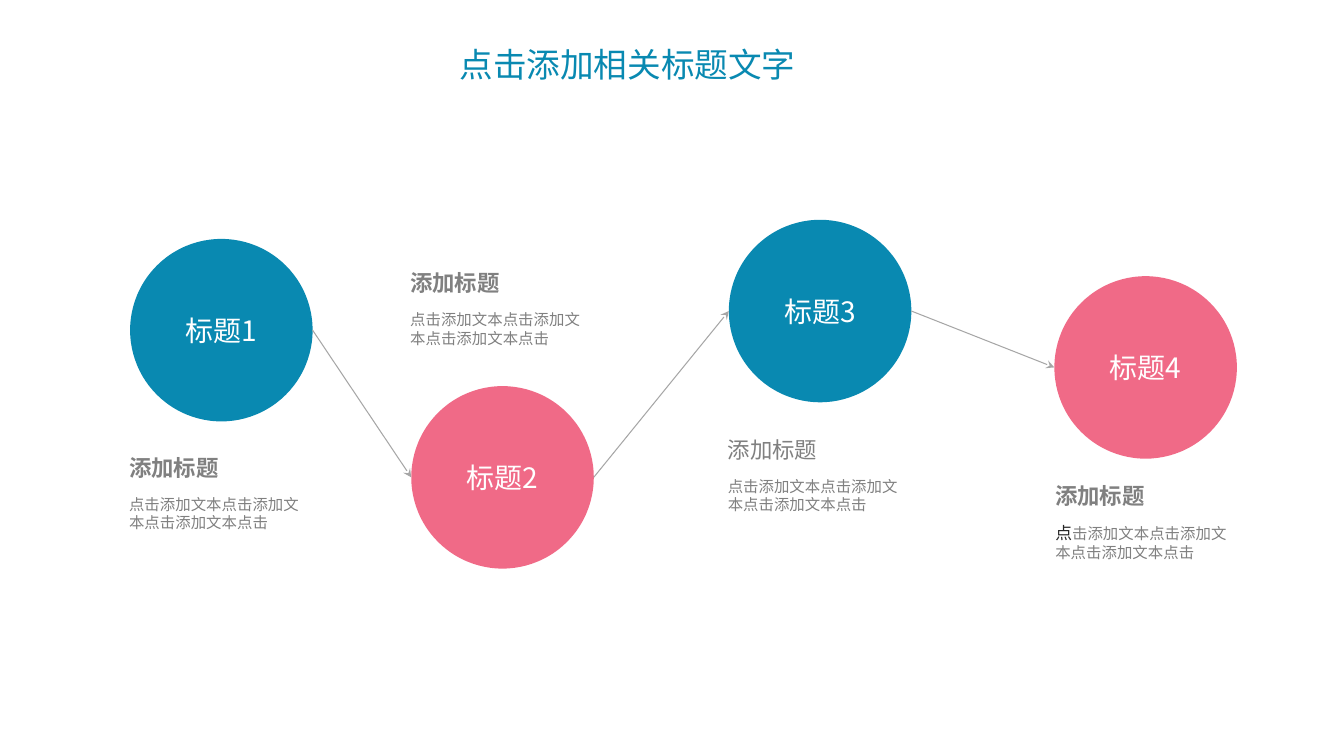
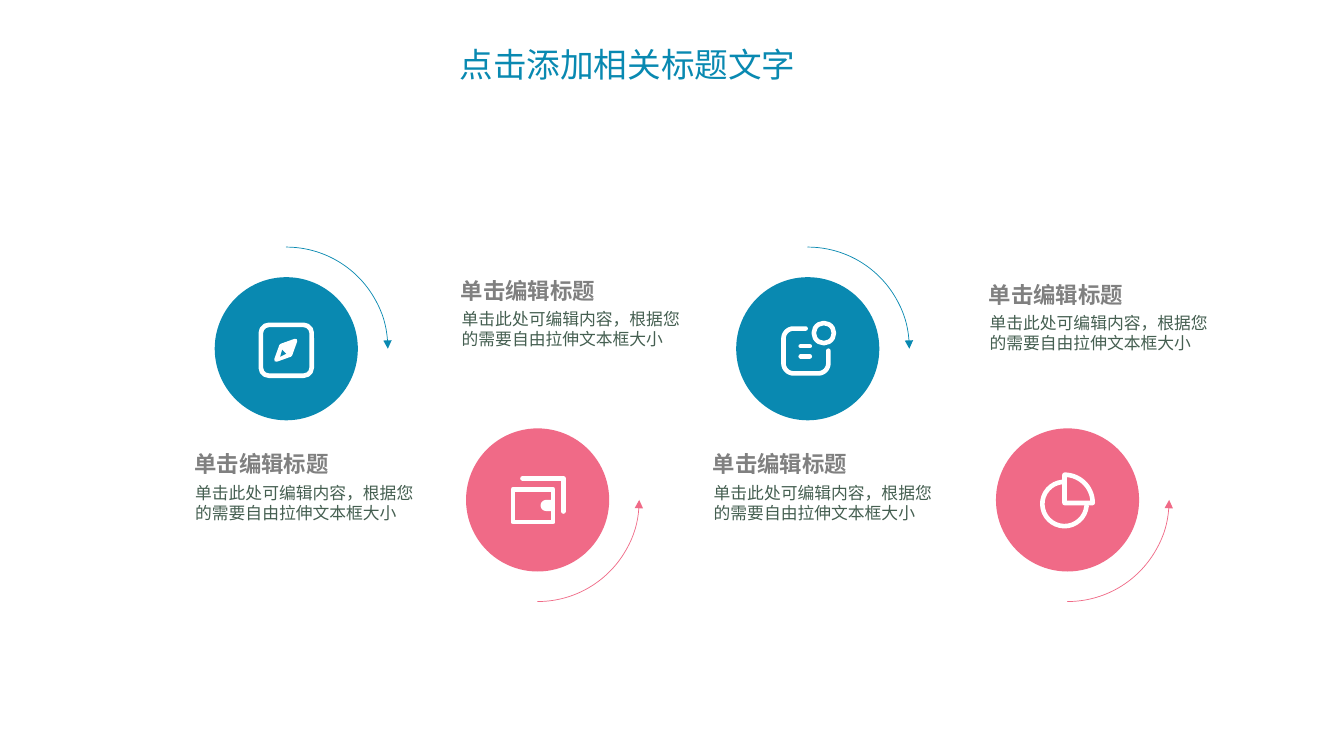
from math import cos, radians, sin

from lxml import etree
from pptx import Presentation
from pptx.dml.color import RGBColor
from pptx.enum.shapes import MSO_CONNECTOR, MSO_SHAPE
from pptx.enum.text import MSO_ANCHOR, MSO_AUTO_SIZE, PP_ALIGN
from pptx.oxml.ns import qn
from pptx.util import Inches, Pt

WIDTH, HEIGHT = Inches(13.333), Inches(7.5)
COLUMN, ROW = WIDTH / 100, HEIGHT / 100

BLUE = RGBColor(0x09, 0x89, 0xB1)
PINK = RGBColor(0xF0, 0x6A, 0x87)
WHITE = RGBColor(0xFF, 0xFF, 0xFF)
GRAY = RGBColor(0x80, 0x80, 0x80)
LINE_GRAY = RGBColor(0xA6, 0xA6, 0xA6)
INK = RGBColor(0x26, 0x26, 0x26)
MOSS = RGBColor(0x45, 0x5F, 0x51)
FONT = "Noto Sans CJK SC"

OVAL, ARC = MSO_SHAPE.OVAL, MSO_SHAPE.ARC
RECTANGLE, ROUNDED = MSO_SHAPE.RECTANGLE, MSO_SHAPE.ROUNDED_RECTANGLE
STRAIGHT = MSO_CONNECTOR.STRAIGHT
TOP, MIDDLE, CENTER = MSO_ANCHOR.TOP, MSO_ANCHOR.MIDDLE, PP_ALIGN.CENTER
GROW = MSO_AUTO_SIZE.SHAPE_TO_FIT_TEXT

STEP_SIZE = 13.58 * COLUMN
ICON_DISC = 10.65 * COLUMN
DOT = ICON_DISC / 142
STROKE = Pt(3.3)
WIDE_INSETS = (Inches(0.13), Inches(0.07))
TITLE_INSETS = (Inches(0.1), Inches(0.05))
NO_INSETS = (0, 0)

STEPS = [
    ("标题1", 9.68, 31.6, BLUE, -1.05, 25.73, True, ""),
    ("标题2", 30.6, 51.07, PINK, -1.05, -18.13, True, ""),
    ("标题3", 54.23, 29.07, BLUE, -1.05, 25.87, False, ""),
    ("标题4", 78.45, 36.53, PINK, -0.9, 24.53, True, "点"),
]
STEP_TEXT = "点击添加文本点击添加文本点击添加文本点击"
TOPIC_TEXT = "单击此处可编辑内容，根据您的需要自由拉伸文本框大小"


def style(para, size, color, bold=False):
    font = para.font
    font.name, font.size, font.bold = FONT, Pt(size), bold
    font.color.rgb = color
    defaults = para._p.pPr.find(qn("a:defRPr"))
    etree.SubElement(defaults, qn("a:ea")).set("typeface", FONT)


def add_text(page, box, text, size, color, insets, bold=False, anchor=TOP, spacing=None, lead=""):
    frame = page.shapes.add_textbox(*map(round, box)).text_frame
    frame.word_wrap = True
    frame.auto_size = GROW
    frame.vertical_anchor = anchor
    frame.margin_left = frame.margin_right = insets[0]
    frame.margin_top = frame.margin_bottom = insets[1]
    para = frame.paragraphs[0]
    if spacing:
        para.line_spacing = spacing
    style(para, size, color, bold)
    if lead:
        span = para.add_run()
        span.text = lead
        span.font.size = Pt(12)
        span.font.color.rgb = INK
    para.add_run().text = text[len(lead):]


def paint(shape, fill=None, line=None, width=STROKE):
    shape.shadow.inherit = False
    if fill is None:
        shape.fill.background()
    else:
        shape.fill.solid()
        shape.fill.fore_color.rgb = fill
    if line is None:
        shape.line.fill.background()
    else:
        shape.line.color.rgb = line
        shape.line.width = width
        line_xml(shape).set("cap", "rnd")
    return shape


def line_xml(shape):
    return shape._element.spPr.find(qn("a:ln"))


def add_arrowhead(shape, end, kind):
    etree.SubElement(line_xml(shape), qn(f"a:{end}End")).set("type", kind)


def add_centered(page, kind, center, width, height):
    left, top = center[0] - width / 2, center[1] - height / 2
    return page.shapes.add_shape(kind, *map(round, (left, top, width, height)))


def add_page(deck):
    page = deck.slides.add_slide(deck.slide_layouts[6])
    box = (33.45 * COLUMN, 5.2 * ROW, 26.8 * COLUMN, 6.67 * ROW)
    add_text(page, box, "点击添加相关标题文字", 24, BLUE, TITLE_INSETS)
    return page


def add_step(page, step):
    label, column, row, color, shift, drop, bold, lead = step
    left, top = column * COLUMN, row * ROW
    center = (left + STEP_SIZE / 2, top + STEP_SIZE / 2)
    disc = paint(add_centered(page, OVAL, center, STEP_SIZE, STEP_SIZE), color)
    frame = disc.text_frame
    frame.vertical_anchor = MIDDLE
    para = frame.paragraphs[0]
    para.alignment = CENTER
    style(para, 20, WHITE)
    para.add_run().text = label

    left, top = left + shift * COLUMN, top + drop * ROW
    heading = (left, top, 13.43 * COLUMN, 7.2 * ROW)
    body = (left, top + 7.2 * ROW, 15.45 * COLUMN, 6.67 * ROW)
    add_text(page, heading, "添加标题", 16, GRAY, WIDE_INSETS, bold, MIDDLE, 1.5)
    add_text(page, body, STEP_TEXT, 11, GRAY, WIDE_INSETS, lead=lead)
    return disc


def link(page, first, second):
    ends = (first.left + first.width, first.top + first.height // 2,
            second.left, second.top + second.height // 2)
    arrow = page.shapes.add_connector(STRAIGHT, *ends)
    arrow.line.color.rgb = LINE_GRAY
    arrow.line.width = Pt(0.75)
    add_arrowhead(arrow, "tail", "stealth")
    etree.SubElement(arrow._element.spPr, qn("a:effectLst"))


def build_steps(deck):
    page = add_page(deck)
    discs = [add_step(page, step) for step in STEPS]
    for first, second in zip(discs, discs[1:]):
        link(page, first, second)


def curve(x, y, radius, start, end):
    return [(x + radius * cos(radians(start + (end - start) * part / 24)),
             y + radius * sin(radians(start + (end - start) * part / 24)))
            for part in range(25)]


def trace(page, center, points, closed=False):
    places = [(center[0] + x * DOT, center[1] + y * DOT) for x, y in points]
    builder = page.shapes.build_freeform(*places[0])
    builder.add_line_segments(places[1:], close=closed)
    return builder.convert_to_shape()


def outline(page, center, kind, x, y, width, height):
    middle = (center[0] + x * DOT, center[1] + y * DOT)
    shape = add_centered(page, kind, middle, width * DOT, height * DOT)
    return paint(shape, line=WHITE)


def draw_compass(page, center):
    frame = outline(page, center, ROUNDED, 0, 1.5, 50.5, 50.5)
    frame.adjustments[0] = 0.16
    needle = [(9, -8), (4, 6), (-10, 11), (-5, -3)]
    paint(trace(page, center, needle, True), WHITE, WHITE, Pt(2.9))
    paint(trace(page, center, [(-6, 8), (-4, 1), (0, 5)], True), BLUE)


def draw_wallet(page, center):
    outline(page, center, RECTANGLE, -4.5, 5.75, 40, 32.5)
    clasp = curve(8.5, 5.5, 5.5, 90, 270) + [(15, 0), (15, 11)]
    paint(trace(page, center, clasp, True), WHITE)
    back = [(-15, -21.5), (25.5, -21.5), (25.5, 11.5)]
    paint(trace(page, center, back), line=WHITE)


def draw_note(page, center):
    edge = ([(-2, -20)] + curve(-14, -10, 10, 270, 180)
            + curve(-14, 14.5, 10, 180, 90) + curve(10.5, 14.5, 10, 90, 0)
            + [(20.5, 2)])
    paint(trace(page, center, edge), line=WHITE)
    outline(page, center, OVAL, 16, -15.5, 20, 20)
    for y in (-2.5, 7.5):
        paint(trace(page, center, [(-7, y), (2, y)]), line=WHITE)


def draw_pie(page, center):
    paint(trace(page, center, curve(-3, 4, 22, 5, 265)), line=WHITE)
    wedge = [(-3, 3)] + curve(-3, 3, 28, 270, 360)
    paint(trace(page, center, wedge, True), line=WHITE)


TOPICS = [
    (21.3, 46.13, BLUE, draw_compass, -6.83, 13.47),
    (40, 66.13, PINK, draw_wallet, -5.7, -29.47),
    (60.1, 46.13, BLUE, draw_note, -7.05, 13.47),
    (79.43, 66.13, PINK, draw_pie, -5.85, -28.93),
]


def add_topic(page, topic):
    column, row, color, draw_icon, shift, drop = topic
    center = (column * COLUMN, row * ROW)
    paint(add_centered(page, OVAL, center, ICON_DISC, ICON_DISC), color)
    sweep = add_centered(page, ARC, center, 1.42 * ICON_DISC, 1.42 * ICON_DISC)
    paint(sweep, line=color, width=Pt(0.5))
    if color == PINK:
        sweep.adjustments[0], sweep.adjustments[1] = 0, 54
        add_arrowhead(sweep, "head", "triangle")
    else:
        add_arrowhead(sweep, "tail", "triangle")
    draw_icon(page, center)

    left, top = center[0] + shift * COLUMN, center[1] + drop * ROW
    heading = (left, top, 16 * COLUMN, 3.6 * ROW)
    body = (left + 0.05 * COLUMN, top + 4.2 * ROW, 16.88 * COLUMN, 5.33 * ROW)
    add_text(page, heading, "单击编辑标题", 16, GRAY, NO_INSETS, True)
    add_text(page, body, TOPIC_TEXT, 12, MOSS, NO_INSETS)


def build_topics(deck):
    page = add_page(deck)
    for topic in TOPICS:
        add_topic(page, topic)


def main():
    deck = Presentation()
    deck.slide_width, deck.slide_height = WIDTH, HEIGHT
    build_steps(deck)
    build_topics(deck)
    deck.save("out.pptx")


if __name__ == "__main__":
    main()
